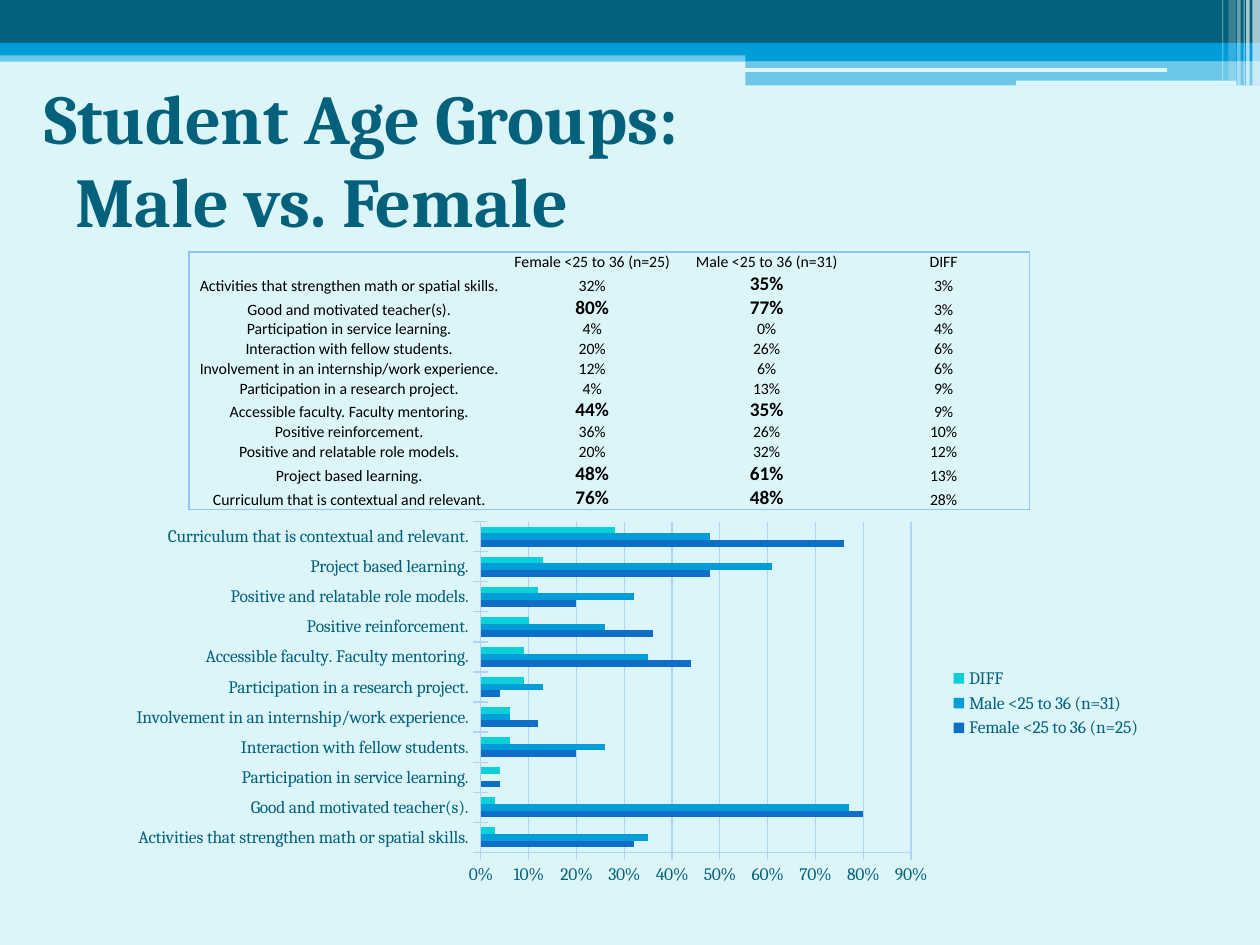
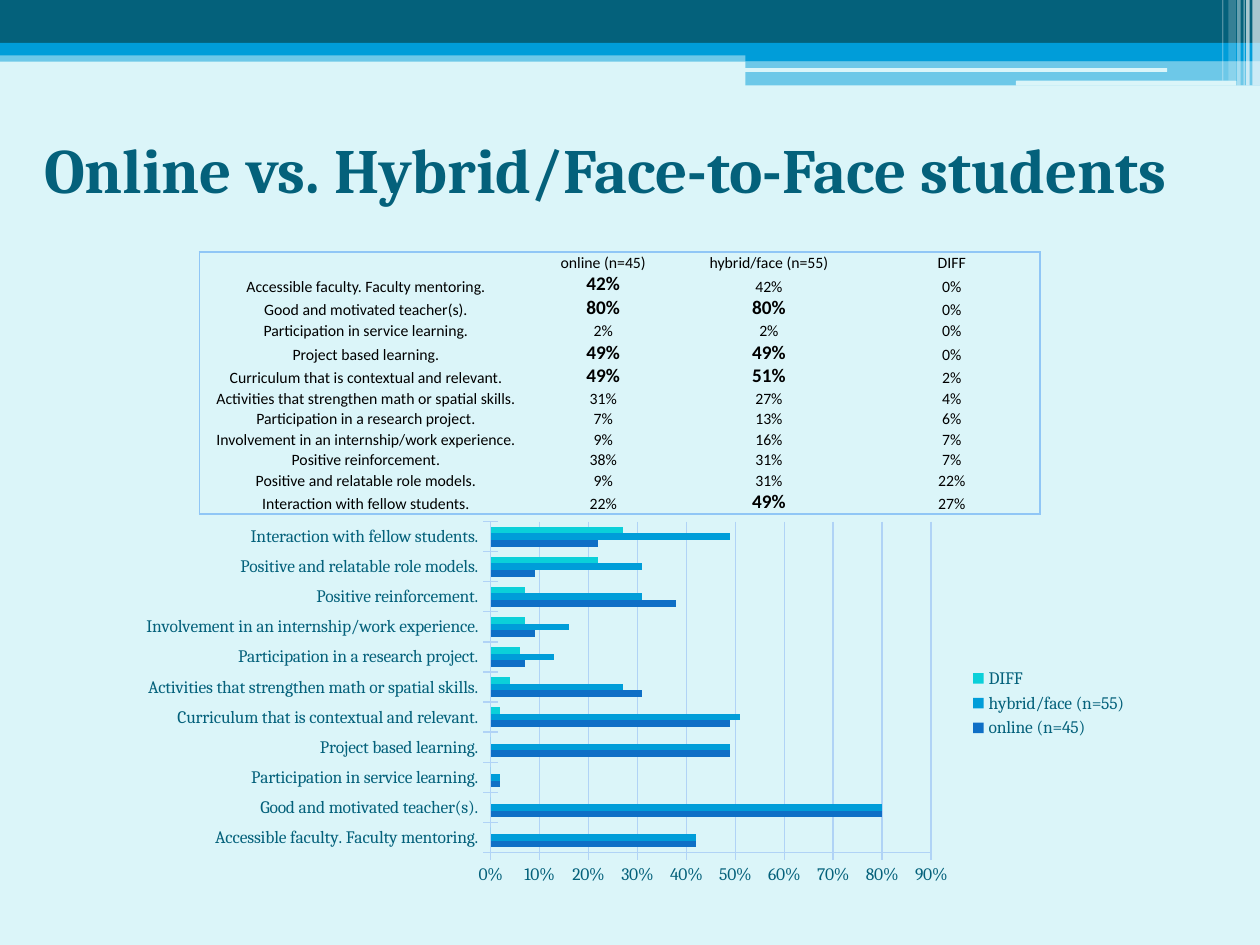
from lxml.etree import SubElement
from pptx import Presentation
from pptx.chart.data import CategoryChartData
from pptx.dml.color import RGBColor
from pptx.enum.chart import XL_CHART_TYPE as CT, XL_LEGEND_POSITION as LP, XL_TICK_MARK as TM
from pptx.enum.shapes import MSO_SHAPE as SHAPE
from pptx.enum.text import MSO_ANCHOR as ANCHOR, MSO_AUTO_SIZE as AUTO, PP_ALIGN as ALIGN
from pptx.oxml.ns import qn
from pptx.util import Pt

PAPER, TEAL, BLUE, WHITE = "DBF5F9", "04617B", "009DD9", "FFFFFF"
BORDER, GRID = "90C6F6", "B0D3F6"
SERIES_COLORS = ["0F6FC6", BLUE, "0BD0D9"]

# left, top, width, height, colour, opacity in percent
BARS = [
    (0, 28.8, 720, 6.5, BLUE, 50),
    (0, 0, 720, 24.5, TEAL, 100),
    (0, 24.5, 720, 7.2, BLUE, 100),
    (426, 28, 294, 7, BLUE, 100),
    (426, 35, 294, 13.8, BLUE, 50),
    (425.5, 38.9, 241.5, 2.2, PAPER, 100),
    (580.5, 46.1, 126, 2.8, PAPER, 100),
    (715.7, 0, 4.3, 48.8, WHITE, 65),
    (712.1, 0, 2, 48.8, WHITE, 65),
    (710.6, 0, 0.7, 48.8, WHITE, 60),
    (707, 0, 2, 48.8, WHITE, 40),
    (702, 0, 4.3, 46.1, WHITE, 20),
    (698.4, 0, 0.7, 46.1, WHITE, 30),
]

MATH = "Activities that strengthen math or spatial skills."
TEACHERS = "Good and motivated teacher(s)."
SERVICE = "Participation in service learning."
STUDENTS = "Interaction with fellow students."
INTERNSHIP = "Involvement in an internship/work experience."
RESEARCH = "Participation in a research project."
FACULTY = "Accessible faculty. Faculty mentoring."
POSITIVE = "Positive reinforcement."
ROLE_MODELS = "Positive and relatable role models."
PROJECT = "Project based learning."
CURRICULUM = "Curriculum that is contextual and relevant."

# Each row: label, the percentages of both groups, and the columns set in bold
SLIDES = [
    dict(
        title="Student Age Groups: \vMale vs. Female", title_top=48.2, title_size=40,
        groups=["Female <25 to 36 (n=25)", "Male <25 to 36 (n=31)"],
        table_left=108, columns=[182.9, 95, 104.4, 97.9], row_height=11.3,
        chart_left=66.2, chart_width=593.3,
        rows=[
            (MATH, 32, 35, [2]),
            (TEACHERS, 80, 77, [1, 2]),
            (SERVICE, 4, 0, []),
            (STUDENTS, 20, 26, []),
            (INTERNSHIP, 12, 6, []),
            (RESEARCH, 4, 13, []),
            (FACULTY, 44, 35, [1, 2]),
            (POSITIVE, 36, 26, []),
            (ROLE_MODELS, 20, 32, []),
            (PROJECT, 48, 61, [1, 2]),
            (CURRICULUM, 76, 48, [1, 2]),
        ]),
    dict(
        title="Online vs. Hybrid/Face-to-Face students", title_top=54, title_size=36,
        groups=["online (n=45)", "hybrid/face (n=55)"],
        table_left=114, columns=[190, 81.4, 108, 101], row_height=11.7,
        chart_left=72, chart_width=579.6,
        rows=[
            (FACULTY, 42, 42, [1]),
            (TEACHERS, 80, 80, [1, 2]),
            (SERVICE, 2, 2, []),
            (PROJECT, 49, 49, [1, 2]),
            (CURRICULUM, 49, 51, [1, 2]),
            (MATH, 31, 27, []),
            (RESEARCH, 7, 13, []),
            (INTERNSHIP, 9, 16, []),
            (POSITIVE, 38, 31, []),
            (ROLE_MODELS, 9, 31, []),
            (STUDENTS, 22, 49, [2]),
        ]),
]


def rgb(color):
    return RGBColor.from_string(color)


def put_text(tf, text, size, font, color, bold=False, align=ALIGN.LEFT):
    """Fill the first paragraph of a text frame; a vertical tab breaks the line."""
    p = tf.paragraphs[0]
    p.text = text
    p.alignment = align
    for r in p.runs:
        r.font.size, r.font.name, r.font.bold = Pt(size), font, bold
        r.font.color.rgb = rgb(color)
    if not text:
        p._p.get_or_add_endParaRPr().set("sz", str(size * 100))
    return p


prs = Presentation()
prs.slide_width, prs.slide_height = Pt(720), Pt(540)
background = prs.slide_master.background.fill
background.solid()
background.fore_color.rgb = rgb(PAPER)

for spec_of_slide in SLIDES:
    d = spec_of_slide
    s = prs.slides.add_slide(prs.slide_layouts[5])

    # Header bands
    for left, top, width, height, color, opacity in BARS:
        kind = SHAPE.ROUNDED_RECTANGLE if color == PAPER else SHAPE.RECTANGLE
        sp = s.shapes.add_shape(kind, Pt(left), Pt(top), Pt(width), Pt(height))
        sp.shadow.inherit = False
        sp.line.fill.background()
        sp.fill.solid()
        sp.fill.fore_color.rgb = rgb(color)
        if opacity < 100:
            clr = sp._element.spPr.find(".//" + qn("a:srgbClr"))
            SubElement(clr, qn("a:alpha"), val=str(opacity * 1000))

    # Title, its second line indented
    title = s.shapes.title
    title.left, title.top, title.width, title.height = Pt(18), Pt(d["title_top"]), Pt(689.8), Pt(84.2)
    tf = title.text_frame
    tf.word_wrap, tf.auto_size, tf.vertical_anchor = True, AUTO.NONE, ANCHOR.MIDDLE
    p = put_text(tf, d["title"], d["title_size"], "Cambria", TEAL, bold=True)
    if "\v" in d["title"]:
        pPr = p._p.get_or_add_pPr()
        pPr.set("marL", str(Pt(18)))
        pPr.set("indent", str(Pt(-18)))

    # Table of percentages
    headers = d["groups"] + ["DIFF"]
    values = [(a, b, abs(a - b)) for _, a, b, _ in d["rows"]]
    labels = [row[0] for row in d["rows"]]
    cells = [[""] + headers]
    cells += [[label] + [f"{v}%" for v in vals] for label, vals in zip(labels, values)]
    bold_columns = [[]] + [row[3] for row in d["rows"]]
    n_rows, n_cols = len(cells), len(cells[0])
    table = s.shapes.add_table(n_rows, n_cols, Pt(d["table_left"]), Pt(144), Pt(sum(d["columns"])),
                               Pt(n_rows * d["row_height"])).table
    table.first_row = table.horz_banding = False
    for column, width in zip(table.columns, d["columns"]):
        column.width = Pt(width)
    for i, texts in enumerate(cells):
        table.rows[i].height = Pt(d["row_height"])
        for j, text in enumerate(texts):
            cell = table.cell(i, j)
            cell.margin_left = cell.margin_right = cell.margin_top = cell.margin_bottom = 0
            cell.vertical_anchor = ANCHOR.BOTTOM
            bold = j in bold_columns[i]
            put_text(cell.text_frame, text, 11 if bold else 9, "Calibri", "000000",
                     bold=bold, align=ALIGN.CENTER)
            outer = {"L": j == 0, "R": j == n_cols - 1, "T": i == 0, "B": i == n_rows - 1}
            for side, is_outer in outer.items():
                ln = SubElement(cell._tc.get_or_add_tcPr(), qn("a:ln" + side), w=str(Pt(1)))
                if is_outer:
                    SubElement(SubElement(ln, qn("a:solidFill")), qn("a:srgbClr"), val=BORDER)
                else:
                    SubElement(ln, qn("a:noFill"))
            cell.fill.background()

    # Bar chart of the same figures
    data = CategoryChartData(number_format="0%")
    data.categories = labels
    for name, vals in zip(headers, zip(*values)):
        data.add_series(name, [v / 100 for v in vals])
    chart = s.shapes.add_chart(CT.BAR_CLUSTERED, Pt(d["chart_left"]), Pt(293.8),
                               Pt(d["chart_width"]), Pt(216), data).chart
    chart.has_title = False
    chart.font.size, chart.font.name = Pt(10), "Cambria"
    chart.font.color.rgb = rgb(TEAL)
    chart.has_legend = True
    chart.legend.position = LP.RIGHT
    chart.legend.include_in_layout = False
    plot = chart.plots[0]
    plot.gap_width, plot.overlap, plot.vary_by_categories = 150, 0, False
    for series, color in zip(plot.series, SERIES_COLORS):
        series.format.fill.solid()
        series.format.fill.fore_color.rgb = rgb(color)
    for axis in (chart.category_axis, chart.value_axis):
        axis.major_tick_mark, axis.minor_tick_mark = TM.CROSS, TM.NONE
        axis.format.line.color.rgb = rgb(GRID)
    axis = chart.value_axis
    axis.minimum_scale, axis.maximum_scale, axis.major_unit = 0, 0.9, 0.1
    axis.tick_labels.number_format, axis.tick_labels.number_format_is_linked = "0%", False
    axis.has_major_gridlines = True
    axis.major_gridlines.format.line.color.rgb = rgb(GRID)

prs.save("out.pptx")
